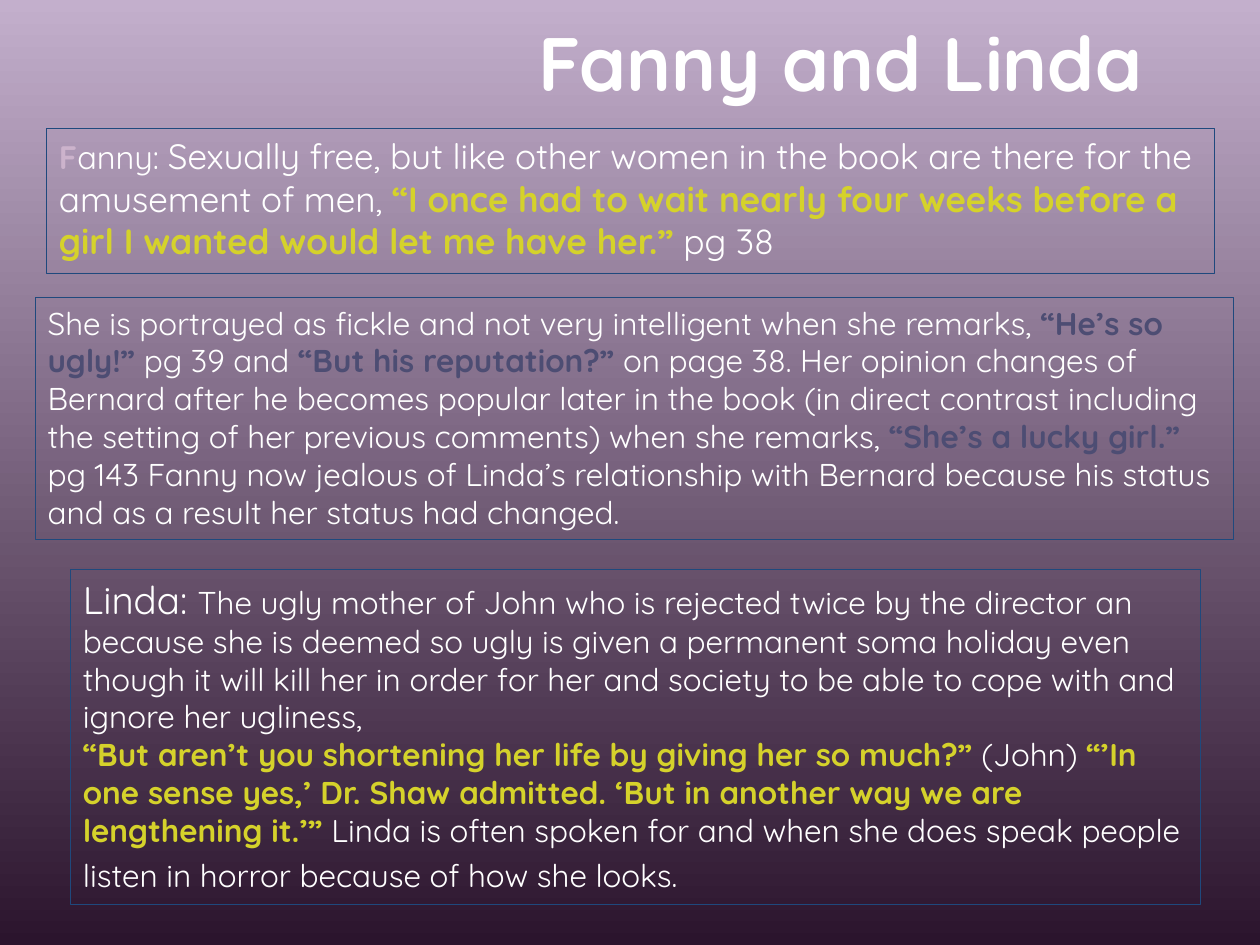
import pptx
import pptx.dml.color
import pptx.enum.shapes
import pptx.enum.text
import pptx.util

Inches = pptx.util.Inches
Pt = pptx.util.Pt

FONT = "Quicksand"
COLORS = {
    "sky": "C3AFCC",
    "ground": "2B142D",
    "border": "1F497D",
    "white": "FFFFFF",
    "initial": "CCB3CC",
    "yellow": "D5D22B",
    "indigo": "4D4D73",
}


def rgb(name):
    return pptx.dml.color.RGBColor.from_string(COLORS[name])


def set_background(slide):
    """Fill the slide with a gradient running from top to bottom."""
    fill = slide.background.fill
    fill.gradient()
    fill.gradient_angle = 270
    for stop, name, position in zip(fill.gradient_stops, ("sky", "ground"), (0, 1)):
        stop.color.rgb = rgb(name)
        stop.position = position


def add_span(para, text, size=18, color="white", bold=False):
    span = para.add_run()
    span.text = text
    span.font.name = FONT
    span.font.size = Pt(size)
    span.font.bold = bold
    span.font.color.rgb = rgb(color)


def quote(text, color="yellow", size=18):
    """Return a bold coloured quotation span."""
    return text, {"color": color, "bold": True, "size": size}


def plain(text, size=18):
    return text, {"size": size}


def add_title(slide, text):
    box = slide.shapes.add_textbox(Inches(1.57), Inches(0.18), Inches(8.2), Inches(0.68))
    frame = box.text_frame
    frame.word_wrap = True
    frame.margin_left = Inches(2.1)
    frame.vertical_anchor = pptx.enum.text.MSO_ANCHOR.MIDDLE
    para = frame.paragraphs[0]
    para.alignment = pptx.enum.text.PP_ALIGN.CENTER
    para.line_spacing = 0.95
    add_span(para, text, size=43.2, bold=True)


def add_text_panel(slide, left, top, width, height, paragraphs):
    """Add an outlined box holding paragraphs, each a list of spans."""
    box = slide.shapes.add_shape(
        pptx.enum.shapes.MSO_SHAPE.RECTANGLE,
        Inches(left), Inches(top), Inches(width), Inches(height))
    box.shadow.inherit = False
    box.fill.background()
    box.line.color.rgb = rgb("border")
    box.line.width = Pt(0.75)
    frame = box.text_frame
    frame.word_wrap = True
    frame.vertical_anchor = pptx.enum.text.MSO_ANCHOR.TOP
    for index, spans in enumerate(paragraphs):
        para = frame.add_paragraph() if index else frame.paragraphs[0]
        para.alignment = pptx.enum.text.PP_ALIGN.LEFT
        for text, style in spans:
            add_span(para, text, **style)


def main():
    deck = pptx.Presentation()
    deck.slide_width, deck.slide_height = Inches(10), Inches(7.5)
    slide = deck.slides.add_slide(deck.slide_layouts[6])
    set_background(slide)
    add_title(slide, "Fanny and Linda")

    add_text_panel(slide, 0.37, 1.02, 9.27, 1.15, [[
        quote("F", "initial", 18.6),
        plain("anny: ", 18.6),
        plain("Sexually free, but like other women in the book are there for "
              "the amusement of men, ", 20.1),
        quote("“I once had to wait nearly four weeks before a girl I wanted "
              "would let me have her.” ", size=20.1),
        plain("pg 38", 20.1),
    ]])

    add_text_panel(slide, 0.28, 2.36, 9.51, 1.92, [[
        plain("She is portrayed as fickle and not very intelligent when she remarks, "),
        quote("“He’s so ugly!” ", "indigo"),
        plain("pg 39 and "),
        quote("“But his reputation?” ", "indigo"),
        plain("on page 38. Her opinion changes of Bernard after he becomes popular "
              "later in the book (in direct contrast including the setting of her "
              "previous comments) when she remarks, "),
        quote("“She’s a lucky girl.” ", "indigo"),
        plain("pg 143 Fanny now jealous of Linda’s relationship with Bernard because "
              "his status and as a result her status had changed."),
    ]])

    add_text_panel(slide, 0.56, 4.52, 8.97, 2.66, [
        [
            plain("Linda: ", 22),
            plain("The ugly mother of John who is rejected twice by the director an "
                  "because she is deemed so ugly is given a permanent soma holiday "
                  "even though it will kill her in order for her and society to be "
                  "able to cope with and ignore her ugliness,"),
        ],
        [
            quote("“But aren’t you shortening her life by giving her so much?” "),
            plain("(John) "),
            quote("“’In one sense yes,’ Dr. Shaw admitted. ‘But in another way we "
                  "are lengthening it.’” "),
            plain("Linda is often spoken for and when she does speak people listen "
                  "in horror because of how she looks."),
            plain(" ", 22),
        ],
    ])
    deck.save("out.pptx")


if __name__ == "__main__":
    main()
